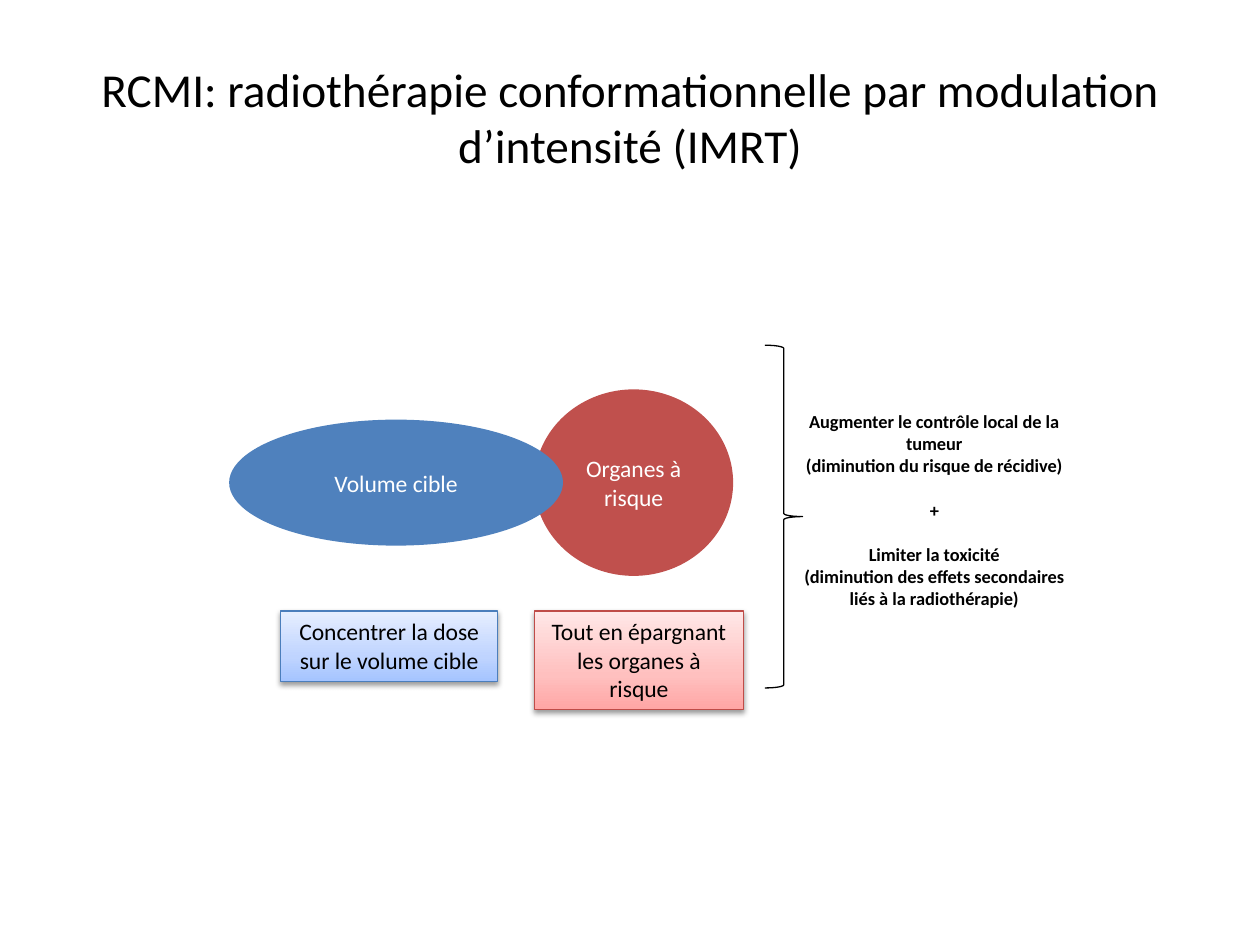
from lxml import etree
from pptx import Presentation
from pptx.dml.color import RGBColor
from pptx.enum.shapes import MSO_SHAPE
from pptx.enum.text import MSO_ANCHOR, PP_ALIGN
from pptx.oxml import parse_xml
from pptx.oxml.ns import nsdecls, qn
from pptx.util import Cm, Pt

ELLIPSE = MSO_SHAPE.OVAL
RECTANGLE = MSO_SHAPE.RECTANGLE
BRACE = MSO_SHAPE.RIGHT_BRACE
MIDDLE, TOP = MSO_ANCHOR.MIDDLE, MSO_ANCHOR.TOP
CENTER = PP_ALIGN.CENTER
TITLE_ONLY = 5

COLORS = {
    "text": "000000",
    "light": "FFFFFF",
    "target": "4F81BD",
    "target_line": "4B7EBC",
    "organs": "C0504D",
    "organs_line": "BF4C48",
}
GRADIENTS = {
    "target": ("A4C4FF", "BFD4FF", "E6EEFF"),
    "organs": ("FFA6A5", "FFC0BF", "FFE7E7"),
}
STOPS = (0, 35, 100)


def rgb(name):
    return RGBColor.from_string(COLORS[name])


class SlideBuilder:
    font_name = "Calibri"
    line_width = Pt(0.75)

    def __init__(self, slide):
        self.slide = slide

    def fill_text(self, shape, paragraphs, size, color="text", bold=False, anchor=MIDDLE):
        frame = shape.text_frame
        frame.word_wrap = True
        frame.vertical_anchor = anchor
        font_format = {"name": self.font_name, "size": Pt(size), "bold": bold}
        for index, (text, space) in enumerate(paragraphs):
            paragraph = frame.add_paragraph() if index else frame.paragraphs[0]
            paragraph.text = text
            paragraph.alignment = CENTER
            if space:
                paragraph.space_before = Pt(space)
            for name, value in font_format.items():
                setattr(paragraph.font, name, value)
            paragraph.font.color.rgb = rgb(color)

    def title(self, text, *box):
        shape = self.slide.shapes.title
        for name, value in zip(("left", "top", "width", "height"), box):
            setattr(shape, name, Cm(value))
        self.fill_text(shape, [(text, 0)], 27)

    def shape(self, kind, *box):
        shape = self.slide.shapes.add_shape(kind, *map(Cm, box))
        shape.shadow.inherit = False
        return shape

    def outline(self, shape, color):
        shape.line.color.rgb = rgb(color)
        shape.line.width = self.line_width

    def ellipse(self, text, color, *box):
        shape = self.shape(ELLIPSE, *box)
        shape.fill.solid()
        shape.fill.fore_color.rgb = rgb(color)
        shape.line.fill.background()
        self.fill_text(shape, [(text, 0)], 13.5, "light")

    def gradient_box(self, text, theme, *box):
        shape = self.shape(RECTANGLE, *box)
        self.outline(shape, f"{theme}_line")
        gradient = parse_xml(
            f'<a:gradFill {nsdecls("a")} rotWithShape="1"><a:gsLst/>'
            '<a:lin ang="16200000" scaled="0"/></a:gradFill>'
        )
        for position, color in zip(STOPS, GRADIENTS[theme]):
            stop = etree.SubElement(gradient[0], qn("a:gs"), pos=str(position * 1000))
            etree.SubElement(stop, qn("a:srgbClr"), val=color)
        properties = shape.element.spPr
        properties.find(qn("a:prstGeom")).addnext(gradient)
        properties.find(qn("a:effectLst")).append(parse_xml(
            f'<a:outerShdw {nsdecls("a")} blurRad="{Pt(3.1)}" dist="{Pt(1.6)}" '
            'dir="5400000" rotWithShape="0"><a:srgbClr val="000000">'
            '<a:alpha val="38000"/></a:srgbClr></a:outerShdw>'
        ))
        self.fill_text(shape, [(text, 0)], 13.5, anchor=TOP)

    def brace(self, *box):
        shape = self.shape(BRACE, *box)
        shape.fill.background()
        self.outline(shape, "text")

    def text(self, paragraphs, *box):
        shape = self.slide.shapes.add_textbox(*map(Cm, box))
        self.fill_text(shape, paragraphs, 10.5, bold=True, anchor=TOP)


def main():
    presentation = Presentation()
    presentation.slide_width, presentation.slide_height = Cm(25.4), Cm(19.05)
    slide = presentation.slides.add_slide(presentation.slide_layouts[TITLE_ONLY])
    builder = SlideBuilder(slide)

    builder.title(
        "RCMI: radiothérapie conformationnelle par modulation d’intensité (IMRT)",
        1.27, 0.76, 22.86, 3.18,
    )
    builder.gradient_box("Concentrer la dose sur le volume cible", "target", 5.66, 12.32, 4.37, 1.42)
    builder.gradient_box("Tout en épargnant les organes à risque", "organs", 10.77, 12.32, 4.22, 1.98)
    builder.brace(15.42, 6.96, 0.76, 6.91)
    line_gap = 12.8
    builder.text(
        [
            ("Augmenter le contrôle local de la tumeur", 0),
            ("(diminution du risque de récidive)", 0),
            ("+", line_gap),
            ("Limiter la toxicité", line_gap),
            ("(diminution des effets secondaires liés à la radiothérapie)", 0),
        ],
        15.8, 8.15, 6.07, 4.75,
    )
    builder.ellipse("Organes à risque", "organs", 10.77, 7.85, 4.01, 3.76)
    builder.ellipse("Volume cible", "target", 4.62, 8.46, 6.73, 2.54)
    presentation.save("out.pptx")


if __name__ == "__main__":
    main()
